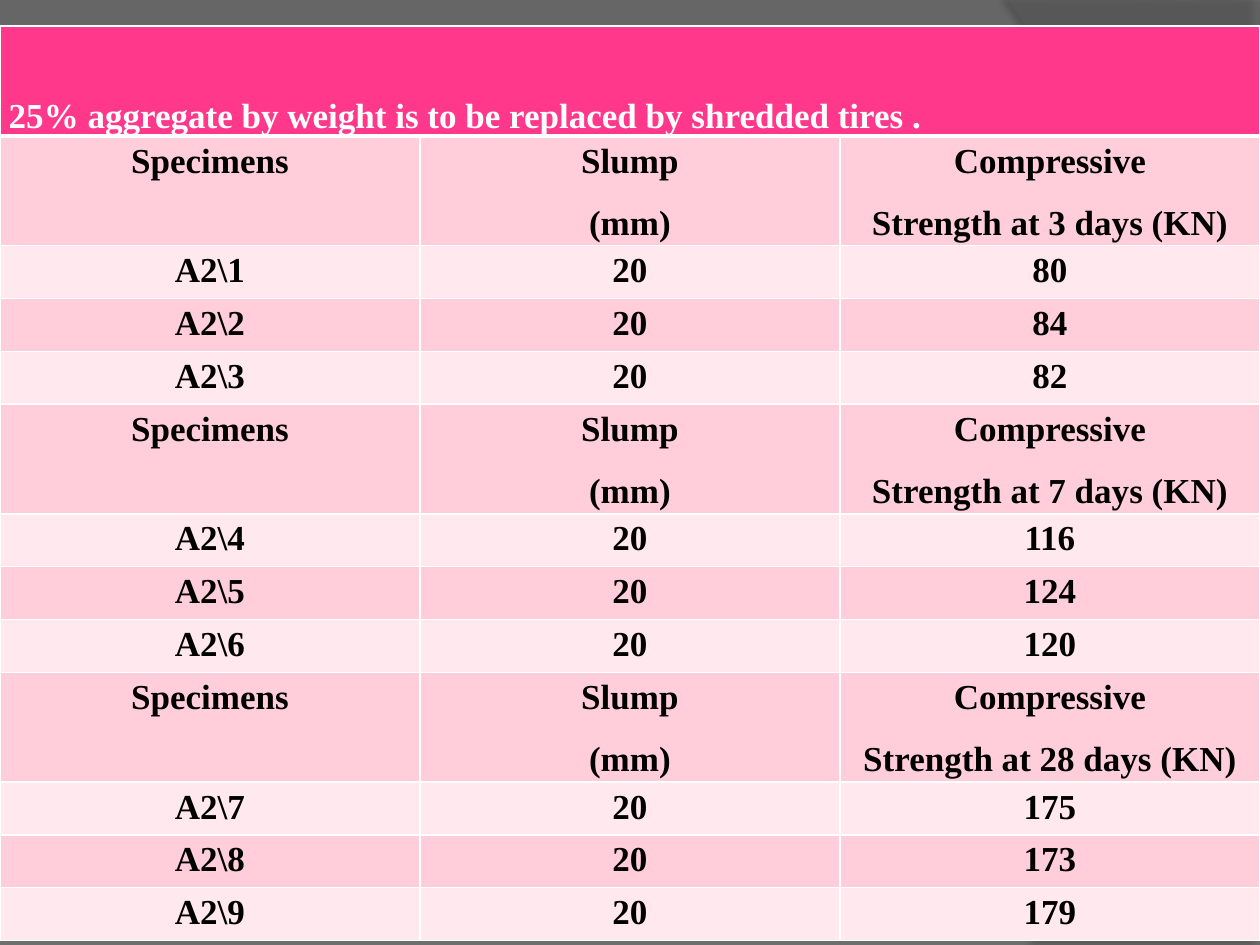
"""Build the slide with concrete test results for 25% shredded tire aggregate."""
from lxml import etree
from pptx import Presentation
from pptx.dml.color import RGBColor
from pptx.enum.text import MSO_ANCHOR, PP_ALIGN
from pptx.oxml.ns import qn
from pptx.util import Pt

LEFT, CENTER = PP_ALIGN.LEFT, PP_ALIGN.CENTER
TOP, BOTTOM = MSO_ANCHOR.TOP, MSO_ANCHOR.BOTTOM
COLORS = {"bg": "666666", "wave": "7F7F7F", "arc": "5E5E5E", "title": "FF388C",
          "dark": "FFCEDA", "light": "FFE8EE", "white": "FFFFFF", "black": "000000"}
FONT = {"name": "Times New Roman", "size": Pt(20), "bold": True}
PARAGRAPH = {"line_spacing": 1.15, "space_after": Pt(10)}
MARGINS = {"margin_left": Pt(5), "margin_right": Pt(5), "margin_top": 0, "margin_bottom": 0}
WIDTH, HEIGHT = 720, 540
TALL, SHORT = 62.7, 30.2
TITLE = "25% aggregate by weight is to be replaced by shredded tires ."
RESULTS = {3: [80, 84, 82], 7: [116, 124, 120], 28: [175, 173, 179]}


def assign(obj, values):
    """Set each named attribute of an object."""
    for name, value in values.items():
        setattr(obj, name, value)


def bezier(p0, p1, p2, p3, steps=40):
    """Return points along a cubic curve, without its start."""
    points = []
    for i in range(1, steps + 1):
        t = i / steps
        weights = ((1 - t) ** 3, 3 * t * (1 - t) ** 2, 3 * t * t * (1 - t), t ** 3)
        points.append(tuple(sum(w * p[k] for w, p in zip(weights, (p0, p1, p2, p3)))
                            for k in (0, 1)))
    return points


def add_xml(parent, tag, **attrs):
    """Append a child element with attributes."""
    return etree.SubElement(parent, qn(tag), {k: str(v) for k, v in attrs.items()})


class Deck:
    """Hold the style and the current slide."""

    def __init__(self, prs):
        """Add a blank slide with the background colour."""
        self.s = prs.slides.add_slide(prs.slide_layouts[6])
        self.fill(self.s.background.fill, "bg")

    def fill(self, fill, color):
        """Apply a solid named colour."""
        fill.solid()
        fill.fore_color.rgb = RGBColor.from_string(COLORS[color])

    def backdrop(self, points, color, alpha, shadow_alpha, distance, angle):
        """Draw a translucent outline with a soft shadow."""
        builder = self.s.shapes.build_freeform(*points[0], scale=Pt(1))
        builder.add_line_segments(points[1:])
        sp = builder.convert_to_shape()
        self.fill(sp.fill, color)
        sp.line.fill.background()
        sp.shadow.inherit = False
        sp_pr = sp._element.spPr
        add_xml(sp_pr.find(qn("a:solidFill"))[0], "a:alpha", val=alpha * 1000)
        shadow = add_xml(sp_pr.find(qn("a:effectLst")), "a:outerShdw", blurRad=Pt(4),
                         dist=Pt(distance), dir=angle * 60000, algn="ctr", rotWithShape=0)
        clr = add_xml(shadow, "a:srgbClr", val=COLORS["black"])
        add_xml(clr, "a:alpha", val=shadow_alpha * 1000)

    def borders(self, cell, top, bottom):
        """Draw white borders around a cell."""
        tc_pr = cell._tc.get_or_add_tcPr()
        for side, width in (("L", 1), ("R", 1), ("T", top), ("B", bottom)):
            ln = add_xml(tc_pr, f"a:ln{side}", w=Pt(width))
            add_xml(add_xml(ln, "a:solidFill"), "a:srgbClr", val=COLORS["white"])

    def text(self, cell, text, color, align):
        """Write one paragraph for each line of text."""
        tf = cell.text_frame
        for i, line in enumerate(text.split("\n")):
            p = tf.add_paragraph() if i else tf.paragraphs[0]
            assign(p, {**PARAGRAPH, "alignment": align})
            r = p.add_run()
            r.text = line
            assign(r.font, FONT)
            r.font.color.rgb = RGBColor.from_string(COLORS[color])

    def table(self, rows, heights, top):
        """Add a banded table whose first row is a merged title."""
        n = len(rows[-1])
        table = self.s.shapes.add_table(len(rows), n, 0, Pt(top), Pt(WIDTH),
                                        Pt(sum(heights))).table
        assign(table, {"first_row": False, "horz_banding": False})
        table.cell(0, 0).merge(table.cell(0, n - 1))
        for i, (values, height) in enumerate(zip(rows, heights)):
            table.rows[i].height = Pt(height)
            band = "title" if i == 0 else "dark" if i % 2 else "light"
            for cell in table.rows[i].cells:
                self.borders(cell, 3 if i == 1 else 1, 3 if i == 0 else 1)
                self.fill(cell.fill, band)
                assign(cell, {**MARGINS, "vertical_anchor": TOP if i else BOTTOM})
            for j, value in enumerate(values):
                self.text(table.cell(i, j), value, "black" if i else "white",
                          CENTER if i else LEFT)


def main():
    """Build and save the slide."""
    prs = Presentation()
    prs.slide_width, prs.slide_height = Pt(WIDTH), Pt(HEIGHT)
    deck = Deck(prs)
    wave = [(0, 507.6), (0, HEIGHT), (WIDTH, HEIGHT), (WIDTH, 374.4)]
    wave += bezier(wave[-1], (402.5, 524.9), (281.5, 517.7), wave[0])
    deck.backdrop(wave, "wave", 45, 35, 3.5, 270)
    arc = [(WIDTH, 1.4), (WIDTH, HEIGHT), (591.1, HEIGHT)]
    arc += bezier(arc[-1], (673.2, 445.7), (733, 216), (576, 0))
    deck.backdrop(arc, "arc", 40, 45, 4, 180)

    rows, heights = [[TITLE]], [TALL]
    specimen = 0
    for days, strengths in RESULTS.items():
        rows.append(["Specimens", "Slump\n(mm)", f"Compressive\nStrength at {days} days (KN)"])
        heights.append(TALL)
        for strength in strengths:
            specimen += 1
            rows.append([f"A2\\{specimen}", "20", str(strength)])
            heights.append(SHORT)
    deck.table(rows, heights, 15)
    prs.save("out.pptx")


if __name__ == "__main__":
    main()
